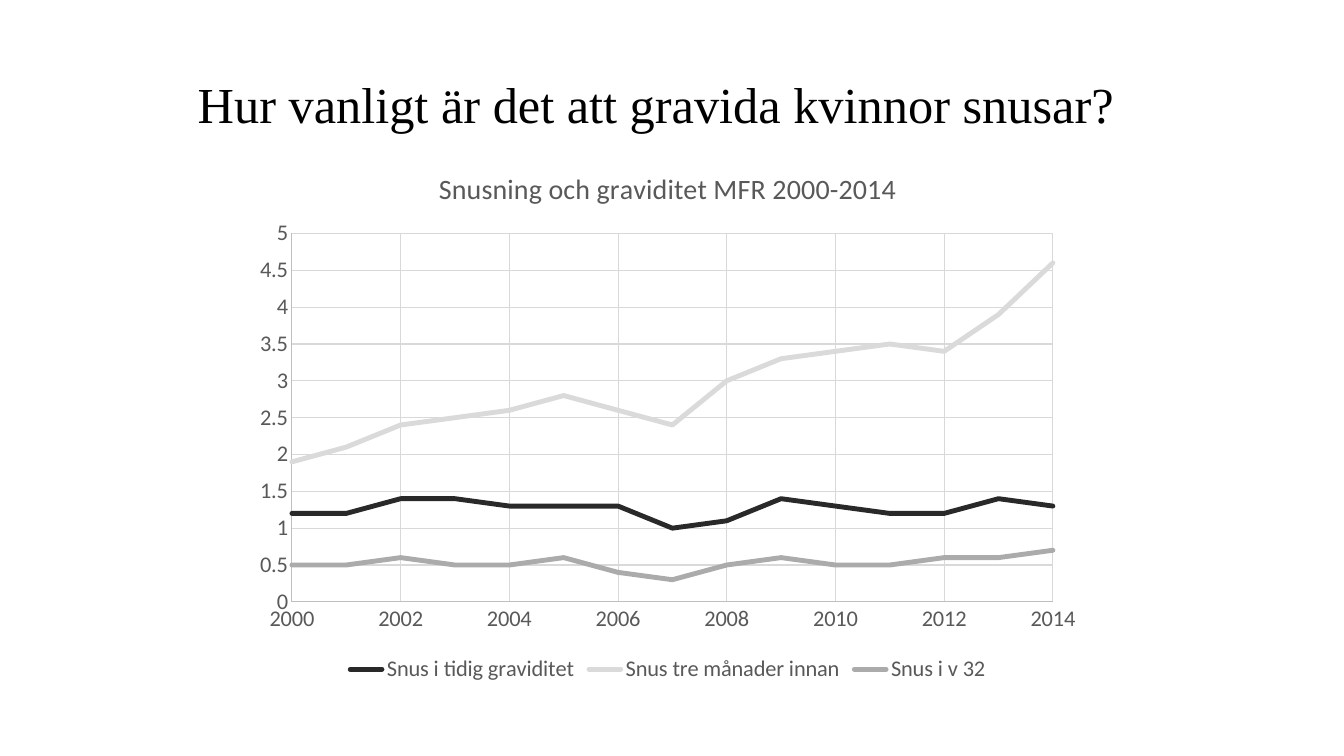
from collections import namedtuple

from lxml import etree
from pptx import Presentation
from pptx.chart.data import XyChartData
from pptx.dml.color import RGBColor
from pptx.enum.chart import XL_CHART_TYPE, XL_LEGEND_POSITION, XL_TICK_MARK
from pptx.enum.text import MSO_ANCHOR, PP_ALIGN
from pptx.oxml.ns import qn
from pptx.util import Pt

SCATTER_LINES = XL_CHART_TYPE.XY_SCATTER_LINES_NO_MARKERS
LEGEND_BOTTOM = XL_LEGEND_POSITION.BOTTOM
NO_TICK = XL_TICK_MARK.NONE
MIDDLE = MSO_ANCHOR.MIDDLE
LEFT = PP_ALIGN.LEFT

BLACK = RGBColor(0x00, 0x00, 0x00)
LABEL_GRAY = RGBColor(0x59, 0x59, 0x59)
AXIS_GRAY = RGBColor(0xBF, 0xBF, 0xBF)
GRID_GRAY = RGBColor(0xD9, 0xD9, 0xD9)
EARLY_COLOR = RGBColor(0x29, 0x29, 0x29)
BEFORE_COLOR = RGBColor(0xDA, 0xDA, 0xDA)
WEEK_32_COLOR = RGBColor(0xAB, 0xAB, 0xAB)

Box = namedtuple("Box", "left top width height")
TITLE_BOX = Box(134, 48.5, 692, 51)
CHART_BOX = Box(173.5, 105.8, 607, 385.2)
PLOT_BOX = Box(35, 61, 543.6, 263.2)

TITLE_FONT = {"name": "Times New Roman", "size": Pt(36), "bold": False}
CHART_TITLE_FONT = {"name": "Calibri", "size": Pt(20), "bold": False}
LABEL_FONT = {"name": "Calibri", "size": Pt(16), "bold": False}
YEAR_SCALE = {"minimum_scale": 2000, "maximum_scale": 2014}
AXIS_FORMAT = {
    "major_tick_mark": NO_TICK,
    "minor_tick_mark": NO_TICK,
    "has_major_gridlines": True,
}

FIRST_YEAR = 1983
UNMEASURED = [None] * 17
SERIES = [
    ("Snus i tidig graviditet", EARLY_COLOR,
     [1.2, 1.2, 1.4, 1.4, 1.3, 1.3, 1.3, 1, 1.1, 1.4, 1.3, 1.2, 1.2, 1.4, 1.3]),
    ("Snus tre månader innan", BEFORE_COLOR,
     [1.9, 2.1, 2.4, 2.5, 2.6, 2.8, 2.6, 2.4, 3, 3.3, 3.4, 3.5, 3.4, 3.9, 4.6]),
    ("Snus i v 32", WEEK_32_COLOR,
     [0.5, 0.5, 0.6, 0.5, 0.5, 0.6, 0.4, 0.3, 0.5, 0.6, 0.5, 0.5, 0.6, 0.6, 0.7]),
]


def set_attributes(target, values):
    for name, value in values.items():
        setattr(target, name, value)


def format_font(font, values, color):
    set_attributes(font, values)
    font.color.rgb = color


def format_line(line, color, width):
    line.color.rgb = color
    line.width = Pt(width)


def add_title(page, box, text):
    title = page.shapes.title
    set_attributes(title, {name: Pt(value) for name, value in box._asdict().items()})
    set_attributes(title.text_frame, {"word_wrap": True, "vertical_anchor": MIDDLE})
    para = title.text_frame.paragraphs[0]
    para.alignment = LEFT
    span = para.add_run()
    span.text = text
    format_font(span.font, TITLE_FONT, BLACK)


def format_axis(axis, scale):
    set_attributes(axis, {**AXIS_FORMAT, **scale})
    format_line(axis.format.line, AXIS_GRAY, 0.75)
    format_line(axis.major_gridlines.format.line, GRID_GRAY, 0.75)
    format_font(axis.tick_labels.font, LABEL_FONT, LABEL_GRAY)
    set_attributes(axis.tick_labels,
                   {"number_format": "General", "number_format_is_linked": False})


def place_plot(chart, box, plot_box):
    plot_area = chart.element.find(".//" + qn("c:plotArea"))
    for layout in plot_area.findall(qn("c:layout")):
        plot_area.remove(layout)
    layout = etree.Element(qn("c:layout"))
    manual = etree.SubElement(layout, qn("c:manualLayout"))
    settings = {
        "layoutTarget": "inner",
        "xMode": "edge",
        "yMode": "edge",
        "x": plot_box.left / box.width,
        "y": plot_box.top / box.height,
        "w": plot_box.width / box.width,
        "h": plot_box.height / box.height,
    }
    for name, value in settings.items():
        etree.SubElement(manual, qn("c:" + name)).set("val", str(value))
    plot_area.insert(0, layout)


def drop_unmeasured(chart):
    for point in list(chart.element.iter(qn("c:pt"))):
        if point.findtext(qn("c:v")) in ("None", ""):
            point.getparent().remove(point)


def add_snus_chart(page, box, heading):
    chart_data = XyChartData()
    for name, _, values in SERIES:
        points = chart_data.add_series(name)
        for year, value in enumerate(UNMEASURED + values, FIRST_YEAR):
            points.add_data_point(year, value)
    lengths = [Pt(value) for value in box]
    chart = page.shapes.add_chart(SCATTER_LINES, *lengths, chart_data).chart
    drop_unmeasured(chart)
    format_font(chart.font, LABEL_FONT, LABEL_GRAY)

    chart.has_title = True
    span = chart.chart_title.text_frame.paragraphs[0].add_run()
    span.text = heading
    format_font(span.font, CHART_TITLE_FONT, LABEL_GRAY)

    chart.has_legend = True
    set_attributes(chart.legend,
                   {"position": LEGEND_BOTTOM, "include_in_layout": False})
    format_font(chart.legend.font, LABEL_FONT, LABEL_GRAY)

    format_axis(chart.category_axis, YEAR_SCALE)
    format_axis(chart.value_axis, {})
    place_plot(chart, box, PLOT_BOX)

    plot = chart.plots[0]
    plot.vary_by_categories = False
    for series, (_, color, _) in zip(plot.series, SERIES):
        series.smooth = False
        format_line(series.format.line, color, 3.5)
        line_element = series.format.line._get_or_add_ln()
        line_element.set("cap", "rnd")


def main():
    deck = Presentation()
    set_attributes(deck, {"slide_width": Pt(960), "slide_height": Pt(540)})
    page = deck.slides.add_slide(deck.slide_layouts.get_by_name("Title Only"))
    add_title(page, TITLE_BOX, "Hur vanligt är det att gravida kvinnor snusar?")
    add_snus_chart(page, CHART_BOX, "Snusning och graviditet MFR 2000-2014")
    deck.save("out.pptx")


if __name__ == "__main__":
    main()
